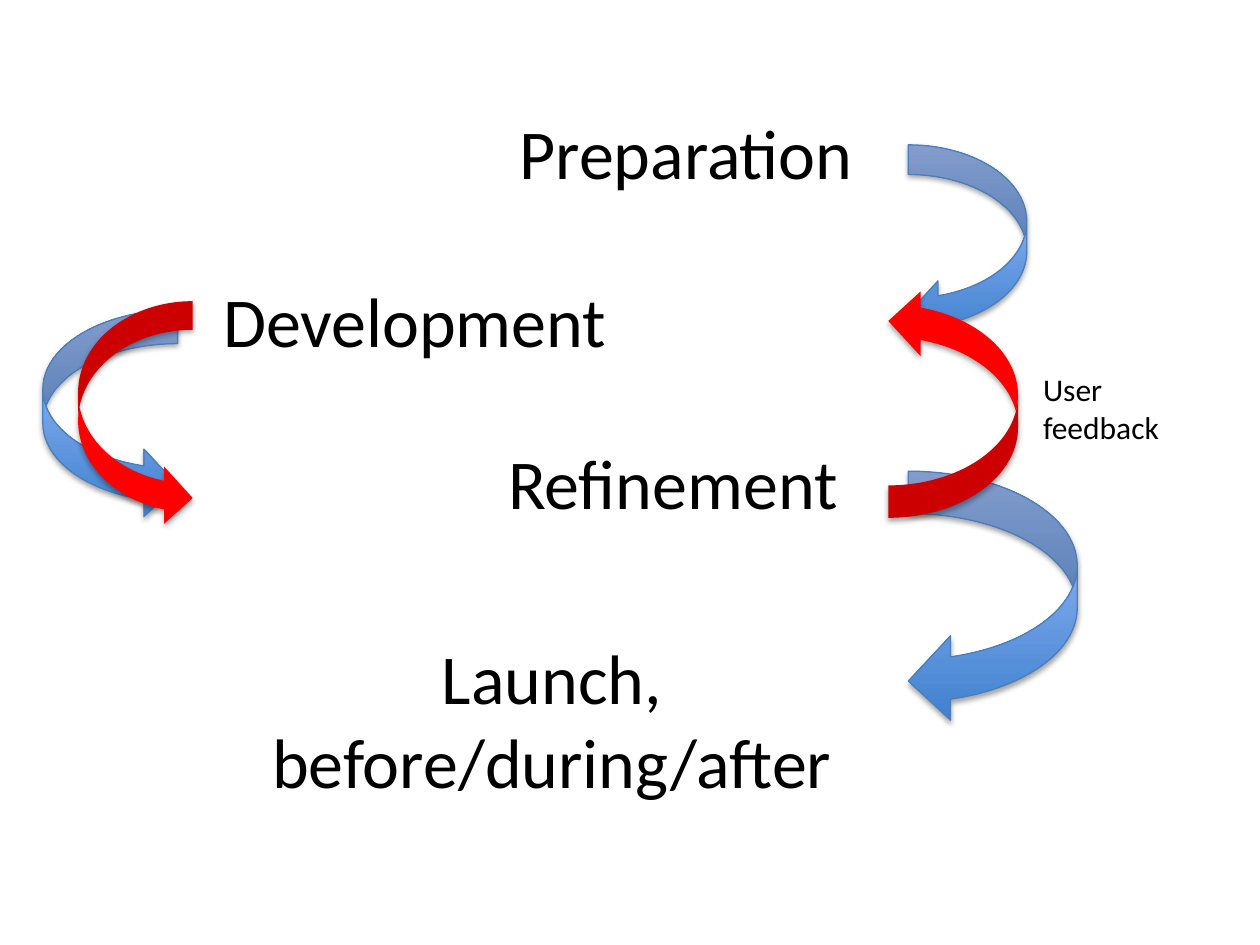
import pptx
import pptx.dml.color
import pptx.enum.shapes
import pptx.enum.text
import pptx.oxml
import pptx.util

RGBColor = pptx.dml.color.RGBColor
ShapeType = pptx.enum.shapes.MSO_SHAPE
Align = pptx.enum.text.PP_ALIGN

BLACK = RGBColor(0x00, 0x00, 0x00)
RED = RGBColor(0xFF, 0x00, 0x00)
BLUE_DARK = RGBColor(0x3F, 0x80, 0xCE)
BLUE_LIGHT = RGBColor(0xA4, 0xC4, 0xFF)
BLUE_LINE = RGBColor(0x4B, 0x7E, 0xBC)

COLUMNS, ROWS = 100, 75
FONT = "Calibri"
SHADOW = (
    '<a:effectLst xmlns:a="http://schemas.openxmlformats.org/drawingml/2006/main">'
    '<a:outerShdw blurRad="40000" dist="23000" dir="5400000" rotWithShape="0">'
    '<a:srgbClr val="000000"><a:alpha val="35000"/></a:srgbClr>'
    '</a:outerShdw></a:effectLst>'
)

STAGES = [
    ("Preparation", (32.9, 8.2, 43.1, 8.1)),
    ("Development", (4.5, 21.5, 56.8, 13.4)),
    ("Refinement", (25, 34.4, 56.8, 13.4)),
    ("Launch, before/during/after", (12.8, 49.9, 62, 13.4)),
]
FORWARD_ARROWS = [
    ((72.1, 11.5, 9.4, 15.7), "flipH"),
    ((3.4, 24.6, 10.7, 16.6), None),
    ((72.1, 37.4, 13.4, 20), "flipH"),
]
FEEDBACK_ARROWS = [
    ((70.5, 22.9, 10.3, 18.2), "flipV"),
    ((6.2, 23.9, 9.1, 17.9), "flipH"),
]
FEEDBACK_LABEL = ("User feedback", (81.8, 28.9, 13.3, 7.1))


def grid_box(area, cells):
    """Turn left, top, width and height in grid cells into lengths in the area."""
    left, top, width, height = area
    column, row = width / COLUMNS, height / ROWS
    return (
        round(left + cells[0] * column),
        round(top + cells[1] * row),
        round(cells[2] * column),
        round(cells[3] * row),
    )


def add_label(slide, box, text, size, alignment):
    """Add one wrapped text box."""
    frame = slide.shapes.add_textbox(*box).text_frame
    frame.word_wrap = True
    paragraph = frame.paragraphs[0]
    paragraph.alignment = alignment
    run = paragraph.add_run()
    run.text = text
    run.font.name = FONT
    run.font.size = pptx.util.Pt(size)
    run.font.color.rgb = BLACK


def add_curved_arrow(slide, box, shape_type, flip):
    """Add a curved arrow with a soft shadow, mirrored if asked, and return it."""
    shape = slide.shapes.add_shape(shape_type, *box)
    properties = shape._element.spPr
    if flip:
        properties.xfrm.set(flip, "1")
    shape.shadow.inherit = False
    effects = properties.find(pptx.oxml.ns.qn("a:effectLst"))
    properties.replace(effects, pptx.oxml.parse_xml(SHADOW))
    return shape


def add_stages(slide, area):
    """Write the project stages."""
    for text, cells in STAGES:
        add_label(slide, grid_box(area, cells), text, 40, Align.CENTER)


def add_forward_arrows(slide, area):
    """Draw the blue arrows from each stage to the next."""
    for cells, flip in FORWARD_ARROWS:
        shape = add_curved_arrow(
            slide, grid_box(area, cells), ShapeType.CURVED_RIGHT_ARROW, flip
        )
        shape.fill.gradient()
        shape.fill.gradient_angle = 90
        for stop, color, position in zip(
            shape.fill.gradient_stops, (BLUE_DARK, BLUE_LIGHT), (0, 1)
        ):
            stop.color.rgb = color
            stop.position = position
        shape.line.color.rgb = BLUE_LINE
        shape.line.width = pptx.util.Pt(0.75)


def add_feedback(slide, area):
    """Draw the red feedback arrows and their label."""
    for cells, flip in FEEDBACK_ARROWS:
        shape = add_curved_arrow(
            slide, grid_box(area, cells), ShapeType.CURVED_LEFT_ARROW, flip
        )
        shape.fill.solid()
        shape.fill.fore_color.rgb = RED
        shape.line.fill.background()
    text, cells = FEEDBACK_LABEL
    add_label(slide, grid_box(area, cells), text, 18, Align.LEFT)


def main():
    """Build and save the slide."""
    presentation = pptx.Presentation()
    presentation.slide_width = pptx.util.Inches(10)
    presentation.slide_height = pptx.util.Inches(7.5)
    slide = presentation.slides.add_slide(presentation.slide_layouts[6])
    area = (0, 0, presentation.slide_width, presentation.slide_height)
    add_stages(slide, area)
    add_forward_arrows(slide, area)
    add_feedback(slide, area)
    presentation.save("out.pptx")


if __name__ == "__main__":
    main()
